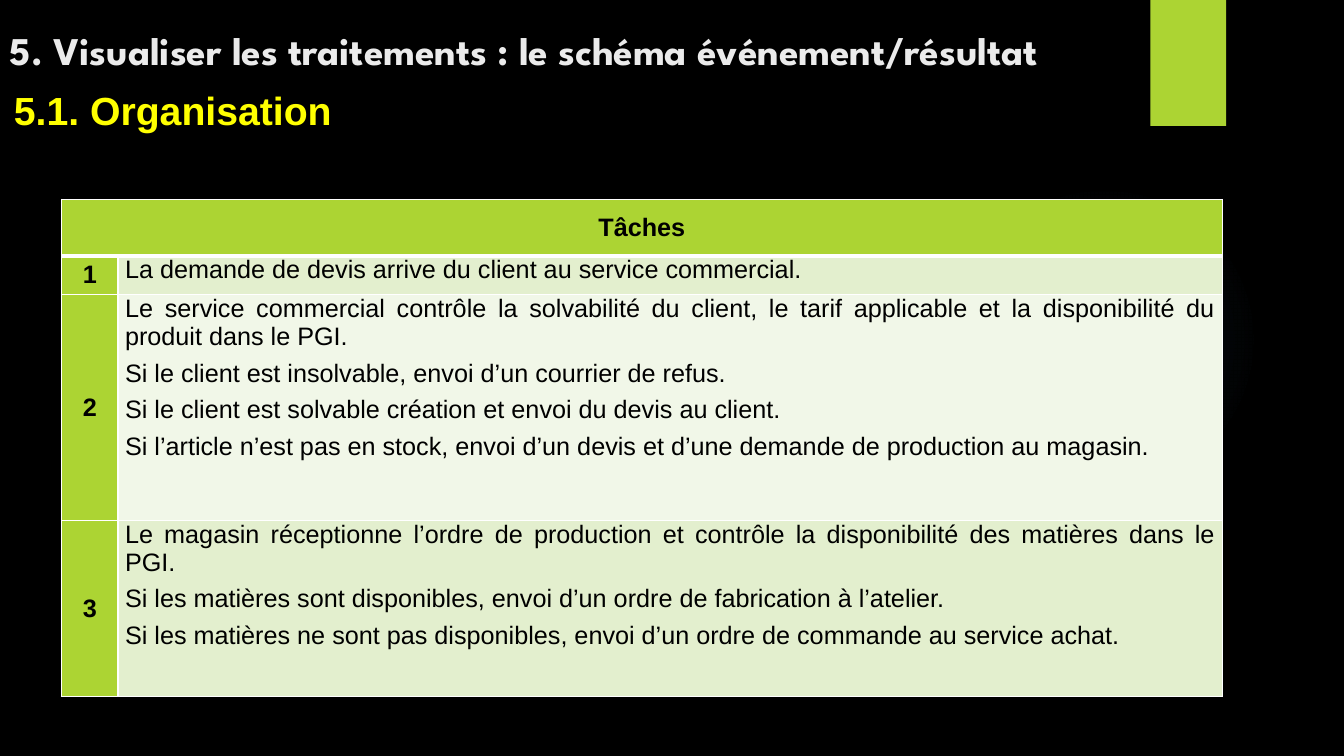
import pptx
import pptx.util
import pptx.dml.color
import pptx.enum.shapes
import pptx.enum.text
import pptx.oxml
import pptx.oxml.ns
import lxml.etree

# Content
TITLE = "5. Visualiser les traitements : le schéma événement/résultat"
SUB = "5.1. Organisation"
HEAD = "Tâches"
TASKS = [
    ("1", ["La demande de devis arrive du client au service commercial."]),
    ("2", ["Le service commercial contrôle la solvabilité du client, le tarif "
           "applicable et la disponibilité du produit dans le PGI.",
           "Si le client est insolvable, envoi d’un courrier de refus.",
           "Si le client est solvable création et envoi du devis au client.",
           "Si l’article n’est pas en stock, envoi d’un devis et d’une demande "
           "de production au magasin."]),
    ("3", ["Le magasin réceptionne l’ordre de production et contrôle la "
           "disponibilité des matières dans le PGI.",
           "Si les matières sont disponibles, envoi d’un ordre de fabrication "
           "à l’atelier.",
           "Si les matières ne sont pas disponibles, envoi d’un ordre de "
           "commande au service achat."]),
]


class Theme:
    back, lime, white, black = "000000", "ACD433", "FFFFFF", "000000"
    title, sub, glow = "EBEBEB", "FFFF00", "7AC4F0"
    bands = ("E3EFCE", "F1F7E8")
    body, display = "Arial", "League Spartan"
    big, small = 28, 18


# Layout: left, top, width, height in percent of the slide
WIDE, HIGH = 13.33, 7.5
GLOW = (70.59, 24.4, 23.11, 41.07)
TAB = (85.6, 0, 5.63, 16.67)
SUBBOX = (0.3, 10.67, 89.95, 7.6)
TOPBOX = (0, 0.4, 94.37, 10)
GRID = (4.58, 26.4, 86.35, 65.8)
COLS = (4.2, 82.15)
ROWS = (7.47, 5.07, 29.87, 23.33)

ALIGN = pptx.enum.text.PP_ALIGN
ANCHOR = pptx.enum.text.MSO_ANCHOR
SHAPE = pptx.enum.shapes.MSO_SHAPE
NS = pptx.oxml.ns.nsdecls("a")


def across(part):
    return pptx.util.Inches(WIDE * part / 100)


def down(part):
    return pptx.util.Inches(HIGH * part / 100)


def place(box):
    left, top, width, height = box
    return across(left), down(top), across(width), down(height)


def rgb(code):
    return pptx.dml.color.RGBColor.from_string(code)


def paint(fill, code):
    fill.solid()
    fill.fore_color.rgb = rgb(code)


def write(para, text, font, size, color, bold):
    run = para.add_run()
    run.text = text
    run.font.name = font
    run.font.size = pptx.util.Pt(size)
    run.font.color.rgb = rgb(color)
    run.font.bold = bold


def block(slide, kind, box):
    shape = slide.shapes.add_shape(kind, *place(box))
    shape.shadow.inherit = False
    shape.line.fill.background()
    paint(shape.fill, Theme.lime)
    return shape


def halo(shape):
    stops = "".join(
        f'<a:gs pos="{pos}000"><a:srgbClr val="{Theme.glow}">'
        f'<a:alpha val="{alpha}000"/></a:srgbClr></a:gs>'
        for pos, alpha in ((0, 7), (36, 6), (69, 0), (100, 0)))
    grad = pptx.oxml.parse_xml(
        f'<a:gradFill {NS} rotWithShape="1"><a:gsLst>{stops}</a:gsLst>'
        '<a:path path="circle"><a:fillToRect l="50000" t="50000" '
        'r="50000" b="50000"/></a:path></a:gradFill>')
    props = shape.element.spPr
    props.replace(props.find(pptx.oxml.ns.qn("a:solidFill")), grad)


def label(slide, box, text, font, color, anchor):
    frame = slide.shapes.add_textbox(*place(box)).text_frame
    frame.word_wrap = True
    frame.vertical_anchor = anchor
    write(frame.paragraphs[0], text, font, Theme.big, color, True)


def edge(cell, base):
    # Borders come before the fill in the cell properties
    props = cell._tc.get_or_add_tcPr()
    for spot, (side, width) in enumerate(
            (("L", 1), ("R", 1), ("T", 1), ("B", base))):
        props.insert(spot, pptx.oxml.parse_xml(
            f'<a:ln{side} {NS} w="{pptx.util.Pt(width)}"><a:solidFill>'
            f'<a:srgbClr val="{Theme.white}"/></a:solidFill></a:ln{side}>'))


def fill_cell(cell, lines, color, align, anchor, bold, base=1):
    paint(cell.fill, color)
    edge(cell, base)
    cell.margin_left = cell.margin_right = pptx.util.Inches(0.07)
    cell.margin_top = cell.margin_bottom = 0
    cell.vertical_anchor = anchor
    for spot, line in enumerate(lines):
        frame = cell.text_frame
        para = frame.add_paragraph() if spot else frame.paragraphs[0]
        para.alignment = align
        if spot:
            para.space_before = pptx.util.Pt(6)
        write(para, line, Theme.body, Theme.small, Theme.black, bold)


def tasks(slide):
    table = slide.shapes.add_table(len(ROWS), len(COLS), *place(GRID)).table
    for col, part in zip(table.columns, COLS):
        col.width = across(part)
    for row, part in zip(table.rows, ROWS):
        row.height = down(part)
    table.cell(0, 0).merge(table.cell(0, 1))
    for col, lines in enumerate(([HEAD], [])):
        fill_cell(table.cell(0, col), lines, Theme.lime,
                  ALIGN.CENTER, ANCHOR.MIDDLE, True, 3)
    for row, (mark, lines) in enumerate(TASKS, 1):
        fill_cell(table.cell(row, 0), [mark], Theme.lime,
                  ALIGN.CENTER, ANCHOR.MIDDLE, True)
        fill_cell(table.cell(row, 1), lines, Theme.bands[(row - 1) % 2],
                  ALIGN.JUSTIFY, ANCHOR.TOP, False)


def main():
    deck = pptx.Presentation()
    deck.slide_width, deck.slide_height = across(100), down(100)
    slide = deck.slides.add_slide(deck.slide_layouts[6])
    paint(slide.background.fill, Theme.back)

    # Backdrop
    halo(block(slide, SHAPE.OVAL, GLOW))
    block(slide, SHAPE.RECTANGLE, TAB)

    # Headings
    label(slide, SUBBOX, SUB, Theme.body, Theme.sub, ANCHOR.MIDDLE)
    label(slide, TOPBOX, TITLE, Theme.display, Theme.title, ANCHOR.BOTTOM)

    # Table of tasks
    tasks(slide)
    deck.save("out.pptx")


if __name__ == "__main__":
    main()
